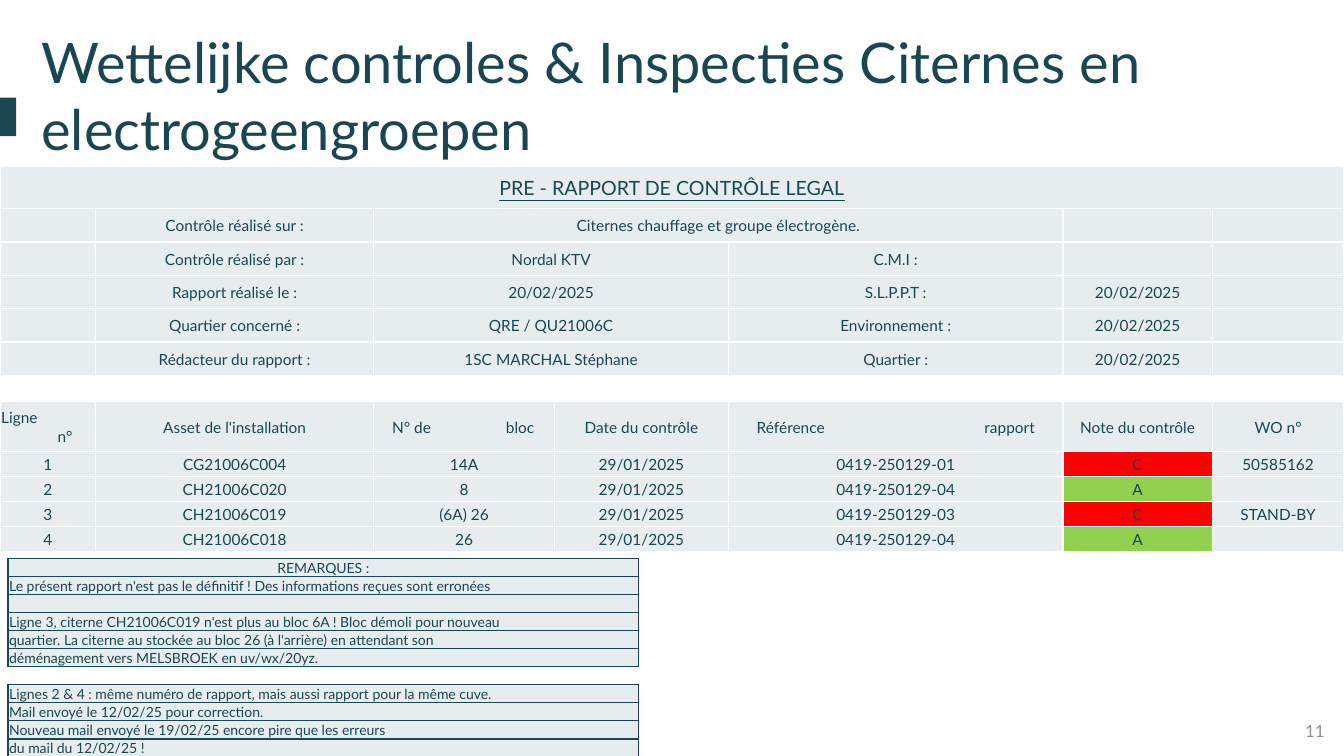
from lxml import etree
from pptx import Presentation
from pptx.dml.color import RGBColor
from pptx.enum.shapes import MSO_SHAPE as Shape
from pptx.enum.text import MSO_ANCHOR as Anchor, MSO_AUTO_SIZE as AutoSize, PP_ALIGN as Align
from pptx.oxml.ns import qn
from pptx.util import Cm, Pt

FONT = "Lato"
TITLE_COLOUR, TEXT_COLOUR, NUMBER_COLOUR = "1A4652", "184652", "8C9498"
CELL_FILL, WHITE = "E7EDEE", "FFFFFF"
NOTE_FILLS = {"A": "92D050", "C": "FF0000"}
ALL_SIDES = "LRTB"

REPORT_COLUMNS = [2.41, 7.01, 4.55, 4.39, 8.43, 3.76, 3.32]
REPORT_ROWS = [1.07] + [0.84] * 5 + [0.66, 1.26] + [0.63] * 4
GAP_ROW, HEADER_ROW, NOTE_COLUMN = 6, 7, 5
REPORT = [
    ["PRE - RAPPORT DE CONTRÔLE LEGAL", "", "", "", "", "", ""],
    ["", "Contrôle réalisé sur :", "Citernes chauffage et groupe électrogène.", "", "", "", ""],
    ["", "Contrôle réalisé par :", "Nordal KTV", "", "C.M.I :", "", ""],
    ["", "Rapport réalisé le :", "20/02/2025", "", "S.L.P.P.T :", "20/02/2025", ""],
    ["", "Quartier concerné :", "QRE / QU21006C", "", "Environnement :", "20/02/2025", ""],
    ["", "Rédacteur du rapport :", "1SC MARCHAL Stéphane", "", "Quartier :", "20/02/2025", ""],
    [""] * 7,
    ["Ligne\vn°", "Asset de l'installation", "N° de\tbloc", "Date du contrôle",
     "Référence\trapport", "Note du contrôle", "WO n°"],
    ["1", "CG21006C004", "14A", "29/01/2025", "0419-250129-01", "C", "50585162"],
    ["2", "CH21006C020", "8", "29/01/2025", "0419-250129-04", "A", ""],
    ["3", "CH21006C019", "(6A) 26", "29/01/2025", "0419-250129-03", "C", "STAND-BY"],
    ["4", "CH21006C018", "26", "29/01/2025", "0419-250129-04", "A", ""],
]
# (row, first column, last column)
MERGES = [(0, 0, 6), (1, 2, 4)] + [(row, 2, 3) for row in range(2, 6)]
# Header column: (left margin, tab position) in cm
HEADER_TABS = {2: (0.46, 2.87), 4: (0.71, 5.74)}

REMARKS_GAP = 6
REMARKS = [
    "REMARQUES :",
    "Le présent rapport n'est pas le définitif ! Des informations reçues sont erronées",
    "",
    "Ligne 3, citerne CH21006C019 n'est plus au bloc 6A ! Bloc démoli pour nouveau",
    "quartier. La citerne au stockée au bloc 26 (à l'arrière) en attendant son",
    "déménagement vers MELSBROEK en uv/wx/20yz.",
    "",
    "Lignes 2 & 4 : même numéro de rapport, mais aussi rapport pour la même cuve.",
    "Mail envoyé le 12/02/25 pour correction.",
    "Nouveau mail envoyé le 19/02/25 encore pire que les erreurs",
    "du mail du 12/02/25 !",
]


def rgb(colour):
    return RGBColor.from_string(colour)


def write(text_frame, text, size, colour, align=Align.LEFT, underline=False):
    text_frame.text = text
    paragraph = text_frame.paragraphs[0]
    paragraph.alignment = align
    for run in paragraph.runs:
        run.font.name = FONT
        run.font.size = Pt(size)
        run.font.color.rgb = rgb(colour)
        run.font.underline = underline
    return paragraph


def set_borders(cell, colour, sides):
    properties = cell._tc.get_or_add_tcPr()
    for side in ALL_SIDES:
        line = etree.SubElement(properties, qn(f"a:ln{side}"), w=str(Pt(1)))
        if side in sides:
            fill = etree.SubElement(line, qn("a:solidFill"))
            etree.SubElement(fill, qn("a:srgbClr"), val=colour)
        else:
            etree.SubElement(line, qn("a:noFill"))


def fill_cell(cell, text, size, align, border, fill, sides=ALL_SIDES, underline=False):
    set_borders(cell, border, sides)
    if fill:
        cell.fill.solid()
        cell.fill.fore_color.rgb = rgb(fill)
    else:
        cell.fill.background()
    cell.vertical_anchor = Anchor.MIDDLE
    cell.margin_left = cell.margin_right = cell.margin_top = Cm(0.03)
    cell.margin_bottom = 0
    paragraph = write(cell.text_frame, text, size, TEXT_COLOUR, align, underline)
    if not text:  # keeps empty rows from growing
        etree.SubElement(paragraph._p, qn("a:endParaRPr"), sz=str(size * 100))


def set_tab(cell, margin, position):
    cell.margin_left = Cm(margin)
    paragraph = cell.text_frame.paragraphs[0]
    paragraph.alignment = Align.LEFT
    tabs = etree.SubElement(paragraph._p.get_or_add_pPr(), qn("a:tabLst"))
    etree.SubElement(tabs, qn("a:tab"), pos=str(Cm(position)), algn="l")


def set_hanging_indent(cell, indent):
    paragraph = cell.text_frame.paragraphs[0]
    paragraph.alignment = Align.LEFT
    properties = paragraph._p.get_or_add_pPr()
    properties.set("marL", str(Cm(indent)))
    properties.set("indent", str(-Cm(indent)))


def add_plain_table(slide, left, top, columns, rows):
    frame = slide.shapes.add_table(len(rows), len(columns), Cm(left), Cm(top),
                                   Cm(sum(columns)), Cm(sum(rows)))
    table = frame.table
    table.first_row = table.horz_banding = False
    for column, width in zip(table.columns, columns):
        column.width = Cm(width)
    for row, height in zip(table.rows, rows):
        row.height = Cm(height)
    return table


def add_title(slide, text):
    title = slide.shapes.title
    title.left, title.top, title.width, title.height = Cm(0.79), Cm(0.56), Cm(31.37), Cm(3.68)
    write(title.text_frame, text, 40, TITLE_COLOUR)
    title.text_frame.auto_size = AutoSize.NONE
    title.text_frame.vertical_anchor = Anchor.TOP


def add_accent(slide):
    shape = slide.shapes.add_shape(Shape.RECTANGLE, 0, Cm(2.46), Cm(0.41), Cm(0.97))
    shape.shadow.inherit = False
    shape.fill.solid()
    shape.fill.fore_color.rgb = rgb(TITLE_COLOUR)
    shape.line.fill.background()


def add_page_number(slide, number):
    box = slide.shapes.add_textbox(Cm(26.01), Cm(17.91), Cm(7.62), Cm(1.02))
    box.text_frame.word_wrap = True
    box.text_frame.vertical_anchor = Anchor.MIDDLE
    write(box.text_frame, number, 12, NUMBER_COLOUR, Align.RIGHT)


def add_report(slide):
    table = add_plain_table(slide, 0, 4.19, REPORT_COLUMNS, REPORT_ROWS)
    for row, texts in enumerate(REPORT):
        for column, text in enumerate(texts):
            fill = None if row == GAP_ROW else CELL_FILL
            if column == NOTE_COLUMN:
                fill = NOTE_FILLS.get(text, fill)
            fill_cell(table.cell(row, column), text, 14 if row == 0 else 11, Align.CENTER,
                      WHITE, fill, underline=row == 0)
    for row, first, last in MERGES:
        table.cell(row, first).merge(table.cell(row, last))
    # Split column headings
    set_hanging_indent(table.cell(HEADER_ROW, 0), 1.42)
    for column, (margin, position) in HEADER_TABS.items():
        set_tab(table.cell(HEADER_ROW, column), margin, position)


def add_remarks(slide):
    table = add_plain_table(slide, 0.2, 14.07, [15.9], [0.45] * len(REMARKS))
    for row, text in enumerate(REMARKS):
        heading, gap = row == 0, row == REMARKS_GAP
        fill_cell(table.cell(row, 0), text, 10, Align.CENTER if heading else Align.LEFT,
                  TEXT_COLOUR, None if gap else CELL_FILL,
                  sides="TB" if gap else ALL_SIDES, underline=heading)


def main():
    presentation = Presentation()
    presentation.slide_width, presentation.slide_height = Cm(33.87), Cm(19.05)
    slide = presentation.slides.add_slide(presentation.slide_layouts[5])
    add_accent(slide)
    add_page_number(slide, "11")
    add_title(slide, "Wettelijke controles & Inspecties Citernes en electrogeengroepen")
    add_report(slide)
    add_remarks(slide)
    presentation.save("out.pptx")


if __name__ == "__main__":
    main()
